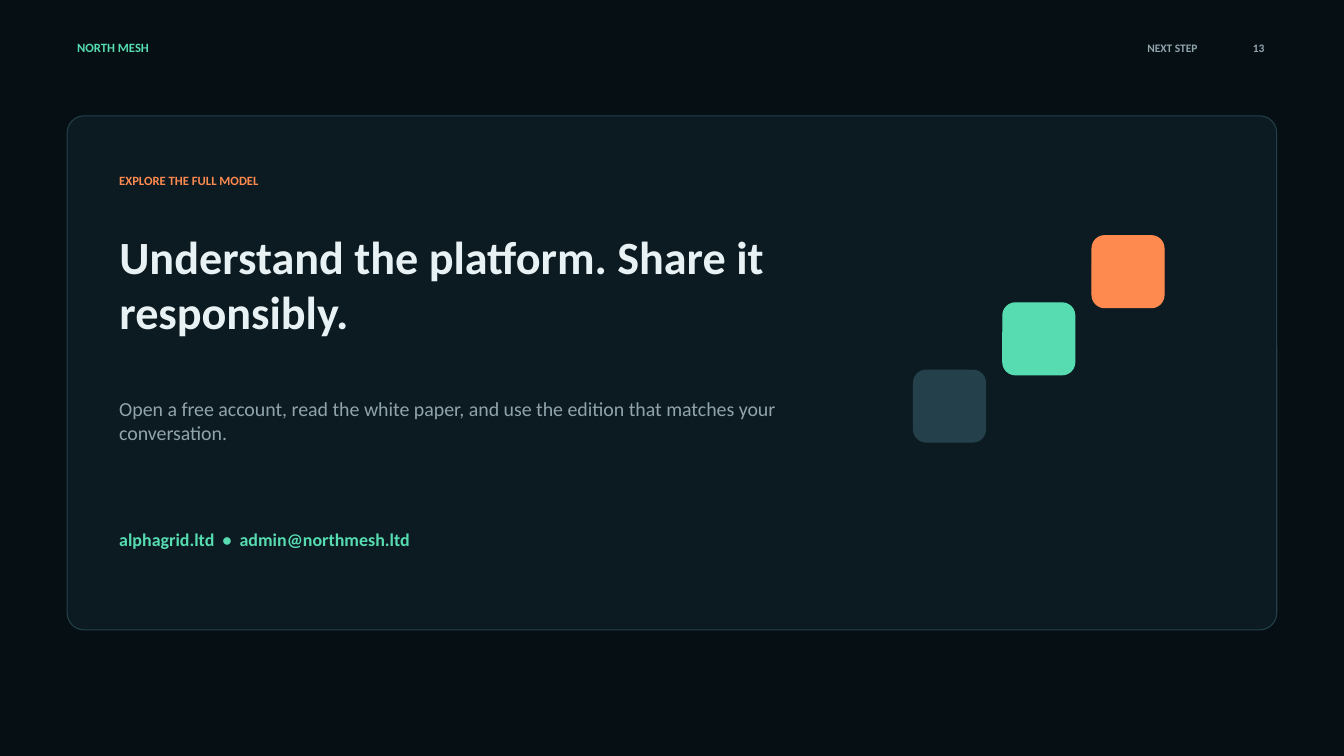
import pptx
import pptx.util
import pptx.dml.color
import pptx.enum.shapes
import pptx.enum.text

COLORS = {
    "background": "061014",
    "panel": "0C1B21",
    "edge": "24404A",
    "mint": "56DCB0",
    "orange": "FF8A50",
    "muted": "91A4AC",
    "light": "E8F1F3",
}
ALIGN = pptx.enum.text.PP_ALIGN


def rgb(name):
    return pptx.dml.color.RGBColor.from_string(COLORS[name])


class SlideBuilder:
    font = "Calibri"

    def __init__(self, prs):
        self.prs = prs
        self.s = prs.slides.add_slide(prs.slide_layouts[5])
        fill = self.s.background.fill
        fill.solid()
        fill.fore_color.rgb = rgb("background")

    def box(self, x, y, w, h):
        width, height = self.prs.slide_width, self.prs.slide_height
        return [round(share * side / 100)
                for share, side in zip((x, y, w, h), (width, height) * 2)]

    def set_text(self, sp, text, size, color, bold, align):
        tf = sp.text_frame
        tf.text = text
        tf.word_wrap = True
        tf.auto_size = pptx.enum.text.MSO_AUTO_SIZE.NONE
        tf.vertical_anchor = pptx.enum.text.MSO_ANCHOR.MIDDLE
        p = tf.paragraphs[0]
        p.alignment = align
        p.line_spacing = 1.0
        p.space_before = pptx.util.Pt(0)
        p.font.name = self.font
        p.font.size = pptx.util.Pt(size)
        p.font.bold = bold
        p.font.color.rgb = rgb(color)

    def title(self, text, area, size, color):
        sp = self.s.shapes.title
        sp.left, sp.top, sp.width, sp.height = self.box(*area)
        self.set_text(sp, text, size, color, True, ALIGN.LEFT)

    def text(self, text, area, size, color, bold=True, align=ALIGN.LEFT):
        sp = self.s.shapes.add_textbox(*self.box(*area))
        self.set_text(sp, text, size, color, bold, align)

    def rounded(self, area, radius, fill, line):
        sp = self.s.shapes.add_shape(
            pptx.enum.shapes.MSO_SHAPE.ROUNDED_RECTANGLE, *self.box(*area))
        sp.adjustments[0] = radius
        sp.shadow.inherit = False
        sp.fill.solid()
        sp.fill.fore_color.rgb = rgb(fill)
        sp.line.color.rgb = rgb(line)
        sp.line.width = pptx.util.Pt(0.75)
        return sp

    def panel(self, area):
        sp = self.rounded(area, 0.033, "panel", "edge")
        self.s.shapes.title.element.addprevious(sp.element)


def main():
    prs = pptx.Presentation()
    prs.slide_width = pptx.util.Inches(13.33)
    prs.slide_height = pptx.util.Inches(7.5)
    b = SlideBuilder(prs)

    b.panel((5, 15.33, 90, 68))
    b.text("NORTH MESH", (5, 4.67, 18, 3.33), 9, "mint")
    b.text("NEXT STEP", (68.75, 4.67, 21.09, 3.33), 8.2, "muted", align=ALIGN.RIGHT)
    b.text("13", (90.63, 4.67, 4.2, 3.33), 8.2, "muted", align=ALIGN.RIGHT)

    left = 8.13
    b.text("EXPLORE THE FULL MODEL", (left, 22.22, 39.06, 3.33), 9, "orange")
    b.title("Understand the platform. Share it responsibly.",
            (left, 28.53, 56.25, 18), 33, "light")
    b.text("Open a free account, read the white paper, and use the edition "
           "that matches your conversation.",
           (left, 49.33, 52.34, 12.5), 14.2, "muted", bold=False)
    b.text("alphagrid.ltd  •  admin@northmesh.ltd",
           (left, 68.67, 42.19, 5.33), 12.8, "mint")

    for step, color in enumerate(("edge", "mint", "orange")):
        b.rounded((67.97 + 6.64 * step, 48.95 - 8.89 * step, 5.36, 9.53),
                  0.175, color, color)

    prs.save("out.pptx")


if __name__ == "__main__":
    main()
